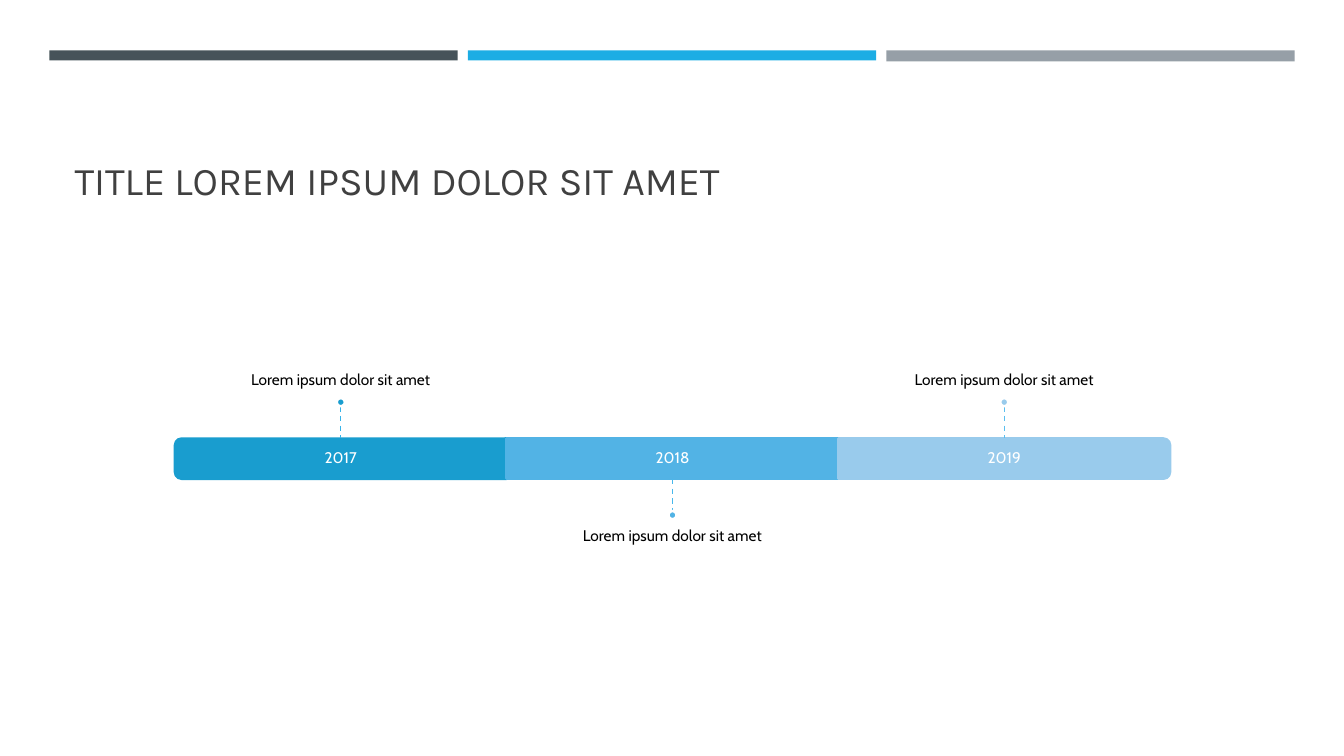
from dataclasses import dataclass

from lxml import etree
from pptx import Presentation
from pptx.dml.color import RGBColor
from pptx.enum.dml import MSO_LINE
from pptx.enum.shapes import MSO_CONNECTOR, MSO_SHAPE
from pptx.enum.text import MSO_ANCHOR, MSO_AUTO_SIZE, PP_ALIGN
from pptx.oxml.ns import qn
from pptx.util import Inches, Pt

RECT, OVAL = MSO_SHAPE.RECTANGLE, MSO_SHAPE.OVAL
ROUNDED_END = MSO_SHAPE.ROUND_2_SAME_RECTANGLE
TOP, MIDDLE, BOTTOM = MSO_ANCHOR.TOP, MSO_ANCHOR.MIDDLE, MSO_ANCHOR.BOTTOM
LEFT, CENTER = PP_ALIGN.LEFT, PP_ALIGN.CENTER

FIRST_X, PITCH = 3.38, 3.29
BAR_Y, BAR_H = 4.55, 0.4
STEM, DOT = 0.32, 0.08
LABEL_W, LABEL_H = 5.48, 1.39
PAD = 0.09


@dataclass
class Milestone:
    year: str
    label: str
    color: str
    stem_color: str
    rotation: int
    above: bool


MILESTONES = [
    Milestone("2017", "Lorem ipsum dolor sit amet", "199DCF", "36B3E9", 270, True),
    Milestone("2018", "Lorem ipsum dolor sit amet", "52B3E5", "48B8EC", 0, False),
    Milestone("2019", "Lorem ipsum dolor sit amet", "99CBEC", "5ABEEF", 90, True),
]
STRIPES = [("465359", 0.1), ("1CADE4", 0.1), ("969FA7", 0.11)]


def rgb(color: str) -> RGBColor:
    return RGBColor.from_string(color)


def add_block(slide, kind, x: float, y: float, w: float, h: float,
              fill: str, line: str = "") -> object:
    sp = slide.shapes.add_shape(kind, Inches(x), Inches(y), Inches(w), Inches(h))
    sp.shadow.inherit = False
    sp.fill.solid()
    sp.fill.fore_color.rgb = rgb(fill)
    if line:
        sp.line.color.rgb = rgb(line)
        sp.line.width = Pt(1.75)
    else:
        sp.line.fill.background()
    return sp


def write(sp, text: str, font: str, size: int, color: str, align, anchor,
          margins: tuple) -> None:
    """Put one formatted paragraph in a shape; margins are left, top, right, bottom."""
    tf = sp.text_frame
    frame = {"word_wrap": True, "auto_size": MSO_AUTO_SIZE.NONE, "vertical_anchor": anchor}
    sides = ("margin_left", "margin_top", "margin_right", "margin_bottom")
    frame.update(zip(sides, map(Inches, margins)))
    for name, value in frame.items():
        setattr(tf, name, value)
    p = tf.paragraphs[0]
    p.alignment, p.line_spacing = align, 0.9
    r = p.add_run()
    r.text = text
    for name, value in {"name": font, "size": Pt(size)}.items():
        setattr(r.font, name, value)
    r.font.color.rgb = rgb(color)


def add_label(slide, text: str, x: float, y: float, w: float, h: float,
              color: str, anchor, margins: tuple) -> None:
    sp = slide.shapes.add_textbox(Inches(x), Inches(y), Inches(w), Inches(h))
    write(sp, text, "Cabin", 11, color, CENTER, anchor, margins)


def add_stem(slide, x: float, top: float, color: str) -> None:
    stem = slide.shapes.add_connector(
        MSO_CONNECTOR.STRAIGHT, Inches(x), Inches(top), Inches(x), Inches(top + STEM))
    stem.line.color.rgb = rgb(color)
    stem.line.width = Pt(1)
    stem.line.dash_style = MSO_LINE.DASH
    etree.SubElement(stem._element.spPr, qn("a:effectLst"))


def add_milestone(slide, m: Milestone, x: float) -> None:
    """Draw one bar segment centred on x, with its year, label, stem and dot."""
    left, top, bottom = x - PITCH / 2, BAR_Y - BAR_H / 2, BAR_Y + BAR_H / 2
    if m.rotation:
        bar = add_block(slide, ROUNDED_END, x - BAR_H / 2, BAR_Y - PITCH / 2,
                        BAR_H, PITCH, m.color, m.color)
        bar.rotation = m.rotation
    else:
        add_block(slide, RECT, left, top, PITCH, BAR_H, m.color, m.color)
    add_label(slide, m.year, left, top, PITCH, BAR_H, "FFFFFF", MIDDLE, (PAD,) * 4)

    if m.above:
        stem_y = top - STEM
        dot_y = stem_y - DOT
        label_y, anchor, margins = dot_y - LABEL_H, BOTTOM, (0, 0, 0, PAD)
    else:
        stem_y = bottom
        dot_y = stem_y + STEM
        label_y, anchor, margins = dot_y + DOT, TOP, (0, PAD, 0, 0)
    add_label(slide, m.label, x - LABEL_W / 2, label_y, LABEL_W, LABEL_H,
              "000000", anchor, margins)
    add_stem(slide, x, stem_y, m.stem_color)
    add_block(slide, OVAL, x - DOT / 2, dot_y, DOT, DOT, m.color, "FFFFFF")


def main() -> None:
    prs = Presentation()
    prs.slide_width, prs.slide_height = Inches(13.33), Inches(7.5)
    slide = prs.slides.add_slide(prs.slide_layouts[5])

    for i, (color, height) in enumerate(STRIPES):
        add_block(slide, RECT, 0.49 + 4.15 * i, 0.5, 4.05, height, color)

    title = slide.shapes.title
    place = {"left": 0.64, "top": 0.77, "width": 12.06, "height": 1.3}
    for name, value in place.items():
        setattr(title, name, Inches(value))
    write(title, "TITLE LOREM IPSUM DOLOR SIT AMET", "Karla", 28, "404040",
          LEFT, BOTTOM, (0.1, 0.05, 0.1, 0.05))

    for i, milestone in enumerate(MILESTONES):
        add_milestone(slide, milestone, FIRST_X + PITCH * i)

    prs.save("out.pptx")


if __name__ == "__main__":
    main()
